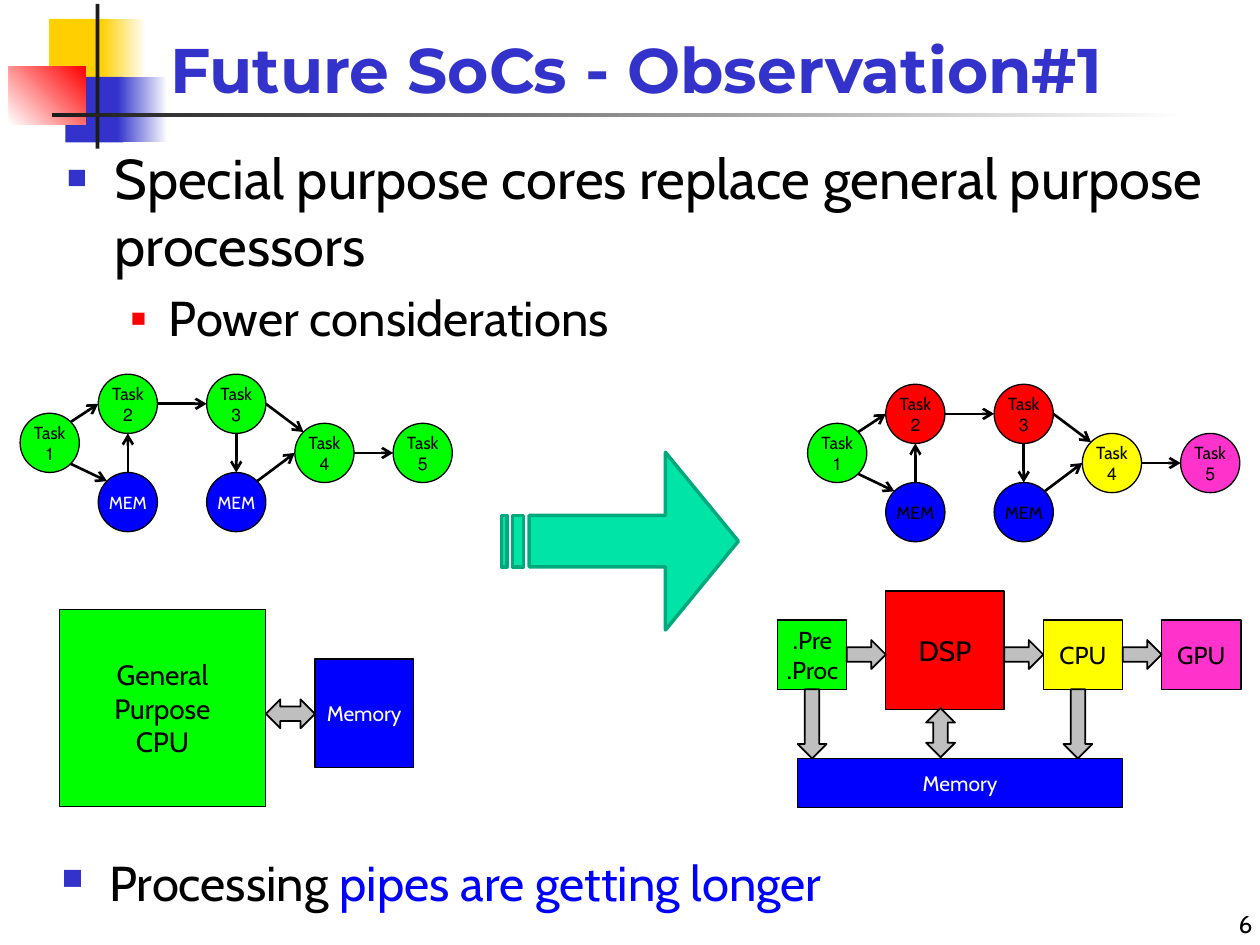
"""Build the slide comparing a general purpose processor with special purpose cores."""
from math import cos, radians, sin
from typing import NamedTuple, Optional

from lxml import etree
from pptx import Presentation
from pptx import util as u
from pptx.dml.color import RGBColor
from pptx.enum import shapes, text
from pptx.oxml import ns

BLACK = RGBColor(0x00, 0x00, 0x00)
WHITE = RGBColor(0xFF, 0xFF, 0xFF)
INK = RGBColor(0x1C, 0x1C, 0x1C)
GOLD = RGBColor(0xFF, 0xCF, 0x01)
INDIGO = RGBColor(0x33, 0x33, 0xCC)
RED = RGBColor(0xFF, 0x00, 0x00)
GREEN = RGBColor(0x00, 0xFF, 0x00)
BLUE = RGBColor(0x00, 0x00, 0xFF)
YELLOW = RGBColor(0xFF, 0xFF, 0x00)
PINK = RGBColor(0xFF, 0x33, 0xCC)
GREY = RGBColor(0xBF, 0xBF, 0xBF)
MINT = RGBColor(0x00, 0xE4, 0xA8)
TEAL = RGBColor(0x00, 0xA9, 0x7C)
KIND = shapes.MSO_SHAPE
DIAMETER = 0.47


class Box(NamedTuple):
    left: float
    top: float
    width: float
    height: float


class Ornament(NamedTuple):
    box: Box
    start: RGBColor
    end: Optional[RGBColor] = None
    angle: int = 0


class Block(NamedTuple):
    label: str
    box: Box
    fill: RGBColor
    size: int
    colour: RGBColor = BLACK


class BlockArrow(NamedTuple):
    box: Box
    rotation: int = 0
    double: bool = False


class Node(NamedTuple):
    label: str
    left: float
    top: float


class Link(NamedTuple):
    source: str
    leave: int
    target: str
    enter: int


class Graph(NamedTuple):
    left: float
    top: float
    fills: dict
    memory_text: RGBColor


ORNAMENTS = [
    Ornament(Box(0.39, 0.15, 0.48, 0.52), GOLD),
    Ornament(Box(0.8, 0.15, 0.36, 0.52), GOLD, WHITE),
    Ornament(Box(0.52, 0.61, 0.46, 0.52), INDIGO),
    Ornament(Box(0.93, 0.61, 0.4, 0.52), INDIGO, WHITE),
    Ornament(Box(0.07, 0.53, 0.61, 0.46), WHITE, RED, 45),
    Ornament(Box(0.76, 0.03, 0.03, 1.15), INK),
    Ornament(Box(0.41, 0.9, 9, 0.03), INK, WHITE),
]
BLOCKS = [
    Block("General\nPurpose\nCPU", Box(0.47, 4.84, 1.64, 1.56), GREEN, 16),
    Block("Memory", Box(2.5, 5.23, 0.78, 0.86), BLUE, 12, WHITE),
    Block("Pre.\nProc.", Box(6.17, 4.92, 0.55, 0.55), GREEN, 14),
    Block("DSP", Box(7.03, 4.69, 0.94, 0.94), RED, 16),
    Block("CPU", Box(8.28, 4.92, 0.63, 0.55), YELLOW, 14),
    Block("GPU", Box(9.22, 4.92, 0.63, 0.55), PINK, 14),
    Block("Memory", Box(6.33, 6.02, 2.58, 0.39), BLUE, 12, WHITE),
]
BLOCK_ARROWS = [
    *(BlockArrow(Box(left, 5.08, 0.31, 0.23)) for left in (6.72, 7.97, 8.91)),
    *(BlockArrow(Box(left, 5.63, 0.55, 0.23), 90) for left in (6.17, 8.28)),
    BlockArrow(Box(7.27, 5.7, 0.39, 0.23), 270, True),
    BlockArrow(Box(2.11, 5.55, 0.39, 0.23), 180, True),
]
NODES = {
    "task1": Node("Task\n1", 0, 0.31),
    "task2": Node("Task\n2", 0.62, 0),
    "memory1": Node("MEM", 0.62, 0.78),
    "task3": Node("Task\n3", 1.48, 0),
    "memory2": Node("MEM", 1.48, 0.78),
    "task4": Node("Task\n4", 2.18, 0.39),
    "task5": Node("Task\n5", 2.96, 0.39),
}
LINKS = [
    Link("task1", 45, "task2", 180),
    Link("task2", 0, "task3", 180),
    Link("task1", -45, "memory1", 135),
    Link("memory1", 90, "task2", -90),
    Link("task3", 0, "task4", 135),
    Link("task3", -90, "memory2", 90),
    Link("memory2", 45, "task4", 180),
    Link("task4", 0, "task5", 180),
]
GRAPHS = [
    Graph(0.16, 2.97, {}, WHITE),
    Graph(6.41, 3.05, {"task2": RED, "task3": RED, "task4": YELLOW, "task5": PINK}, BLACK),
]


def inches(values) -> list:
    """Convert numbers to lengths."""
    return [u.Inches(value) for value in values]


def write(paragraph, words: str, *, size: int, colour=BLACK, font="Cabin",
          bold=False, align=None, rtl=False) -> None:
    """Add one formatted run to a paragraph."""
    run = paragraph.add_run()
    run.text = words
    run.font.size, run.font.name, run.font.bold = u.Pt(size), font, bold
    run.font.color.rgb = colour
    if align is not None:
        paragraph.alignment = align
    if rtl:
        paragraph._p.get_or_add_pPr().set("rtl", "1")


def add_bullet(paragraph, mark: str, colour: RGBColor, margin: float, hang: float,
               percent: int, space: float) -> None:
    """Give a paragraph a coloured bullet with a hanging indent."""
    paragraph.space_before = u.Pt(space)
    props = paragraph._p.get_or_add_pPr()
    props.set("marL", str(u.Inches(margin)))
    props.set("indent", str(-u.Inches(hang)))
    tint = etree.SubElement(props, ns.qn("a:buClr"))
    etree.SubElement(tint, ns.qn("a:srgbClr"), val=str(colour))
    etree.SubElement(props, ns.qn("a:buSzPct"), val=str(percent * 1000))
    etree.SubElement(props, ns.qn("a:buChar"), char=mark)


def draw_shape(slide, kind, box: Box, fill: RGBColor, line=BLACK, weight=0.75):
    """Draw a filled preset shape, outlined when a line colour is given."""
    shape = slide.shapes.add_shape(kind, *inches(box))
    shape.shadow.inherit = False
    shape.fill.solid()
    shape.fill.fore_color.rgb = fill
    if line is None:
        shape.line.fill.background()
    else:
        shape.line.color.rgb, shape.line.width = line, u.Pt(weight)
    return shape


def label_shape(shape, label: str, size: int, colour: RGBColor) -> None:
    """Centre the lines of a label in a shape."""
    frame = shape.text_frame
    frame.vertical_anchor = text.MSO_ANCHOR.MIDDLE
    for index, words in enumerate(label.split("\n")):
        paragraph = frame.add_paragraph() if index else frame.paragraphs[0]
        write(paragraph, words, size=size, colour=colour, align=text.PP_ALIGN.CENTER, rtl=True)


def draw_ornament(slide, ornament: Ornament) -> None:
    """Draw one plain or gradient piece of the header decoration."""
    shape = draw_shape(slide, KIND.RECTANGLE, ornament.box, ornament.start, None)
    if ornament.end is not None:
        shape.fill.gradient()
        shape.fill.gradient_angle = ornament.angle
        for stop, colour in zip(shape.fill.gradient_stops, (ornament.start, ornament.end)):
            stop.color.rgb = colour


def draw_block(slide, block: Block) -> None:
    """Draw a labelled hardware block."""
    shape = draw_shape(slide, KIND.RECTANGLE, block.box, block.fill)
    shape.text_frame.word_wrap = False
    label_shape(shape, block.label, block.size, block.colour)


def draw_block_arrow(slide, arrow: BlockArrow) -> None:
    """Draw a grey data path between blocks."""
    kind = KIND.LEFT_RIGHT_ARROW if arrow.double else KIND.RIGHT_ARROW
    draw_shape(slide, kind, arrow.box, GREY, weight=1).rotation = arrow.rotation


def rim(graph: Graph, key: str, angle: int) -> list:
    """Find the point on a node's edge at an angle in degrees."""
    radius, turn = DIAMETER / 2, radians(angle)
    return inches((graph.left + NODES[key].left + radius * (1 + cos(turn)),
                   graph.top + NODES[key].top + radius * (1 - sin(turn))))


def draw_graph(slide, graph: Graph) -> None:
    """Draw a task graph with its nodes and links."""
    for key, node in NODES.items():
        memory = node.label == "MEM"
        box = Box(graph.left + node.left, graph.top + node.top, DIAMETER, DIAMETER)
        fill = BLUE if memory else graph.fills.get(key, GREEN)
        circle = draw_shape(slide, KIND.OVAL, box, fill)
        circle.text_frame.margin_left = circle.text_frame.margin_right = 0
        label_shape(circle, node.label, 10, graph.memory_text if memory else BLACK)
    for link in LINKS:
        line = slide.shapes.add_connector(
            shapes.MSO_CONNECTOR.STRAIGHT, *rim(graph, link.source, link.leave),
            *rim(graph, link.target, link.enter))
        line.line.color.rgb, line.line.width = BLACK, u.Pt(1.5)
        etree.SubElement(line.line._get_or_add_ln(), ns.qn("a:tailEnd"), type="arrow")
        etree.SubElement(line._element.spPr, ns.qn("a:effectLst"))


def place(shape, box: Box):
    """Move a text shape and return its wrapped frame."""
    shape.left, shape.top, shape.width, shape.height = inches(box)
    shape.text_frame.word_wrap = True
    shape.text_frame.auto_size = text.MSO_AUTO_SIZE.NONE
    return shape.text_frame


def write_texts(slide) -> None:
    """Fill the title, the lists and the page number."""
    heading = place(slide.shapes.title, Box(1.25, -0.03, 8.75, 0.92))
    heading.vertical_anchor = text.MSO_ANCHOR.BOTTOM
    write(heading.paragraphs[0], "Future SoCs - Observation#1", size=36, colour=INDIGO,
          font="Montserrat", bold=True, align=text.PP_ALIGN.LEFT)

    points = place(slide.placeholders[1], Box(0.43, 1.09, 9.36, 2.58))
    cores, power = points.paragraphs[0], points.add_paragraph()
    write(cores, "Special purpose cores replace general purpose processors", size=32)
    add_bullet(cores, "■", INDIGO, 0.38, 0.38, 60, 6.4)
    power.level = 1
    write(power, "Power considerations", size=28)
    add_bullet(power, "▪", RED, 0.81, 0.31, 100, 5.6)

    box = Box(0.39, 6.72, 9.36, 0.63)
    pipes = place(slide.shapes.add_textbox(*inches(box)), box).paragraphs[0]
    write(pipes, "Processing ", size=28)
    write(pipes, "pipes are getting longer", size=28, colour=BLUE)
    add_bullet(pipes, "■", INDIGO, 0.38, 0.38, 60, 5.6)

    box = Box(7.96, 7, 2.08, 0.5)
    page = place(slide.shapes.add_textbox(*inches(box)), box)
    page.vertical_anchor = text.MSO_ANCHOR.BOTTOM
    write(page.paragraphs[0], "6", size=14, align=text.PP_ALIGN.RIGHT)


def main() -> None:
    """Assemble and save the slide."""
    deck = Presentation()
    deck.slide_width, deck.slide_height = inches((10, 7.5))
    slide = deck.slides.add_slide(deck.slide_layouts[1])
    for ornament in ORNAMENTS:
        draw_ornament(slide, ornament)
    write_texts(slide)
    for block in BLOCKS:
        draw_block(slide, block)
    for arrow in BLOCK_ARROWS:
        draw_block_arrow(slide, arrow)
    for graph in GRAPHS:
        draw_graph(slide, graph)
    change = draw_shape(slide, KIND.STRIPED_RIGHT_ARROW, Box(3.98, 3.59, 1.88, 1.41), MINT, TEAL, 2)
    change.adjustments[0], change.adjustments[1] = 0.29, 0.41
    deck.save("out.pptx")


if __name__ == "__main__":
    main()
